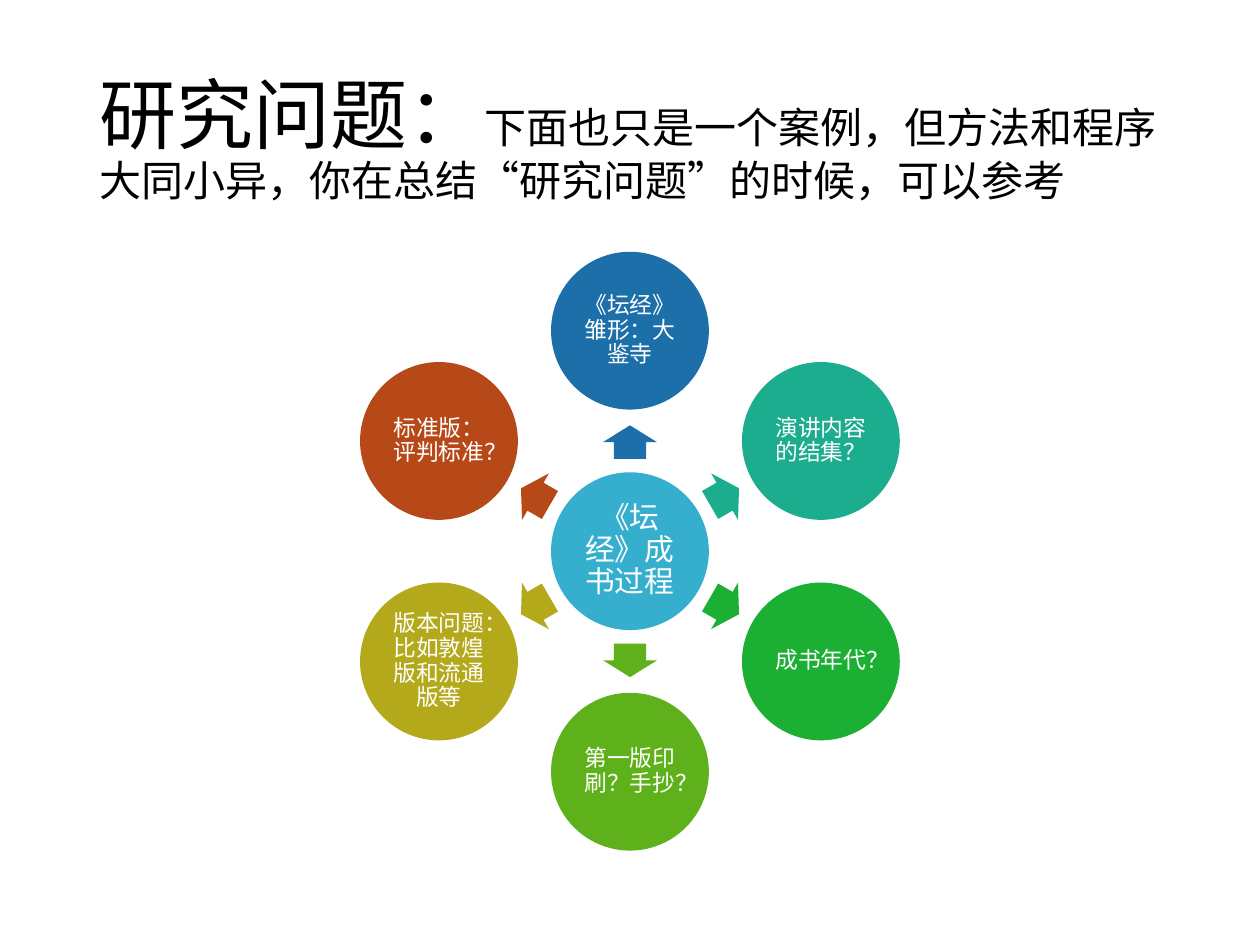
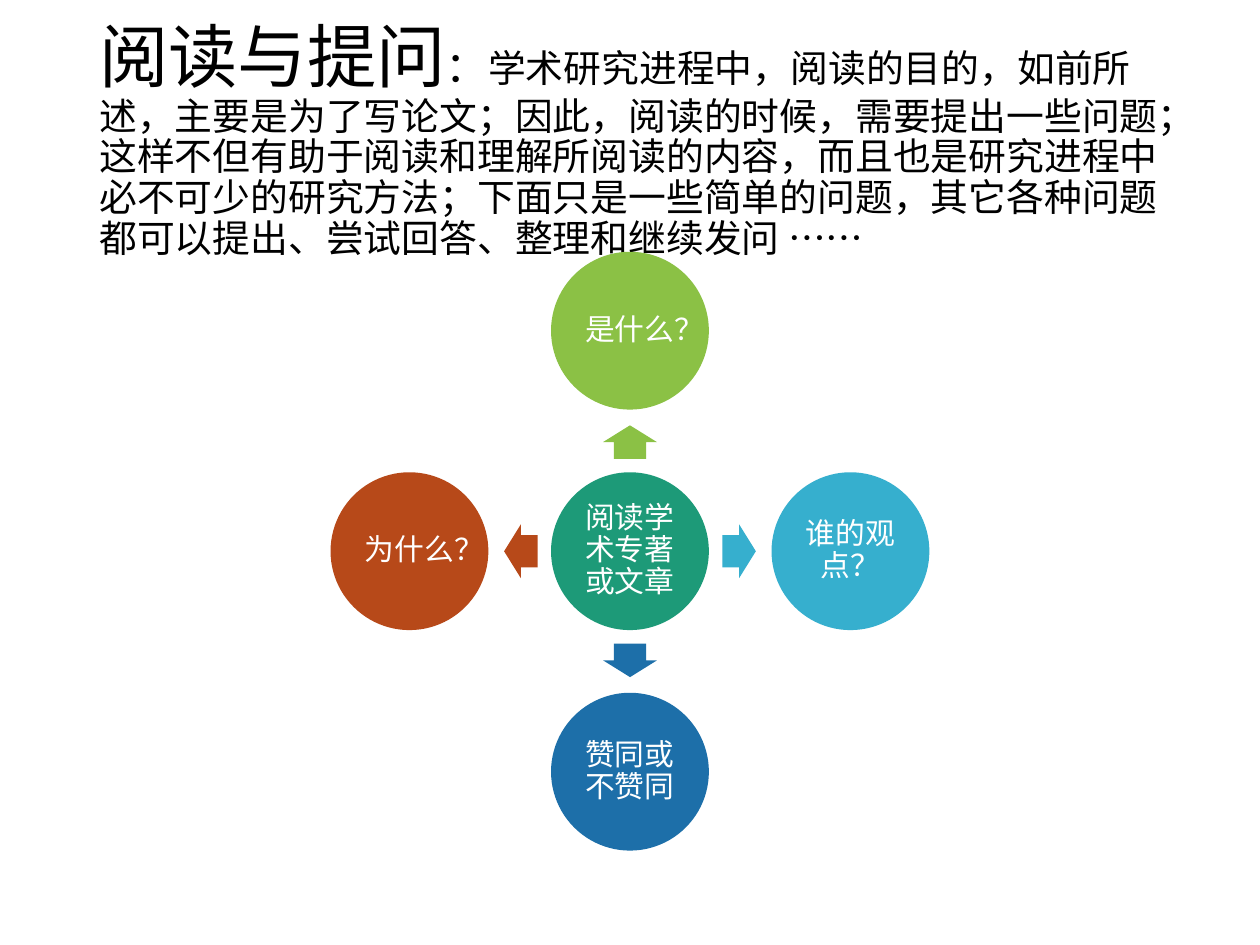
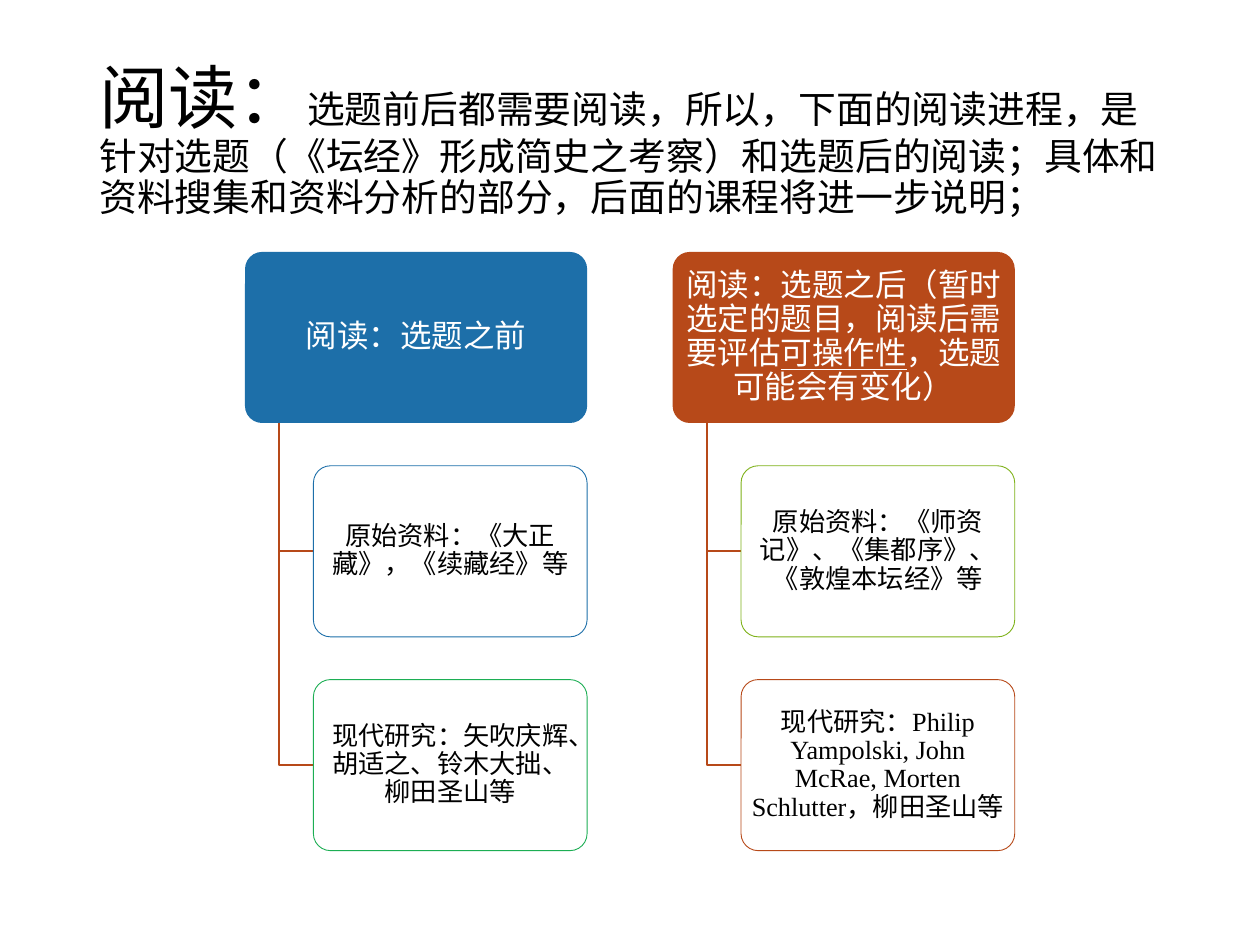
import math

import pptx
import pptx.dml.color
import pptx.enum.lang
import pptx.enum.shapes
import pptx.enum.text
import pptx.util

Pt = pptx.util.Pt
SHAPE = pptx.enum.shapes.MSO_SHAPE
ALIGN = pptx.enum.text.PP_ALIGN

# Shared style
FONT = "Times New Roman"
BLACK, WHITE = "000000", "FFFFFF"
BLUE, RUST, SKY = "1D6FA9", "B74919", "36AFCE"


def colour(hex_code):
    return pptx.dml.color.RGBColor.from_string(hex_code)


def write(frame, pieces, ink, align, side=7.2, edge=3.6):
    """Fill a frame with one paragraph of (text, size, underlined) pieces."""
    frame.word_wrap = True
    frame.auto_size = pptx.enum.text.MSO_AUTO_SIZE.NONE
    frame.vertical_anchor = pptx.enum.text.MSO_ANCHOR.MIDDLE
    frame.margin_left = frame.margin_right = Pt(side)
    frame.margin_top = frame.margin_bottom = Pt(edge)
    paragraph = frame.paragraphs[0]
    paragraph.alignment = align
    paragraph.line_spacing = 0.9
    for text, size, underlined in pieces:
        run = paragraph.add_run()
        run.text = text
        run.font.name = FONT
        run.font.size = Pt(size)
        run.font.underline = underlined
        run.font.color.rgb = colour(ink)
        run.font.language_id = pptx.enum.lang.MSO_LANGUAGE_ID.SIMPLIFIED_CHINESE


deck = pptx.Presentation()
deck.slide_width, deck.slide_height = Pt(720), Pt(540)

# Slides and titles
headings = [
    [("研究问题：", 44, False),
     ("下面也只是一个案例，但方法和程序大同小异，你在总结“研究问题”的时候，可以参考", 24, False)],
    [("阅读与提问", 39.6, False),
     ("：", 24.3, False),
     ("学术研究进程中，阅读的目的，如前所述，主要是为了写论文；因此，阅读的时候，"
      "需要提出一些问题；这样不但有助于阅读和理解所阅读的内容，而且也是研究进程中"
      "必不可少的研究方法；下面只是一些简单的问题，其它各种问题都可以提出、尝试回答、"
      "整理和继续发问 ……", 21.6, False)],
    [("阅读：", 39.6, False),
     ("选题前后都需要阅读，所以，下面的阅读进程，是针对选题（《坛经》形成简史之考察）"
      "和选题后的阅读；具体和资料搜集和资料分析的部分，后面的课程将进一步说明；", 21.6, False)],
]
for heading in headings:
    slide = deck.slides.add_slide(deck.slide_layouts[5])
    title = slide.shapes.title
    title.left, title.top = Pt(49.5), Pt(28.75)
    title.width, title.height = Pt(621), Pt(104.4)
    write(title.text_frame, heading, BLACK, ALIGN.LEFT)
question_slide, asking_slide, reading_slide = deck.slides

# Radial diagrams: a hub, and topics clockwise from the top
CENTRE_X, CENTRE_Y = 360, 315
ORBIT, ARROW_ORBIT = 126, 62.4
DIAMETER = 90.2
ARROW_LENGTH, ARROW_BREADTH = 19.1, 30.7

radials = [
    (question_slide, ("《坛经》成书过程", SKY), 13, [
        ("《坛经》雏形：大鉴寺", BLUE),
        ("演讲内容的结集？", "1CAC8E"),
        ("成书年代？", "1BAF34"),
        ("第一版印刷？手抄？", "5FB11B"),
        ("版本问题：比如敦煌版和流通版等", "B4A91A"),
        ("标准版：评判标准？", RUST)]),
    (asking_slide, ("阅读学术专著或文章", "1D9A78"), 17, [
        ("是什么？", "8BC145"),
        ("谁的观点？", SKY),
        ("赞同或不赞同", BLUE),
        ("为什么？", RUST)]),
]
for slide, hub, topic_size, topics in radials:
    circles = [(*hub, 17, 0, 0)]
    for number, (topic, fill) in enumerate(topics):
        degrees = 360 / len(topics) * number - 90
        across, down = math.cos(math.radians(degrees)), math.sin(math.radians(degrees))
        circles.append((topic, fill, topic_size, ORBIT * across, ORBIT * down))
        arrow = slide.shapes.add_shape(
            SHAPE.RIGHT_ARROW,
            Pt(CENTRE_X + ARROW_ORBIT * across - ARROW_LENGTH / 2),
            Pt(CENTRE_Y + ARROW_ORBIT * down - ARROW_BREADTH / 2),
            Pt(ARROW_LENGTH), Pt(ARROW_BREADTH))
        arrow.adjustments[0], arrow.adjustments[1] = 0.6, 0.5
        arrow.rotation = degrees % 360
        arrow.shadow.inherit = False
        arrow.fill.solid()
        arrow.fill.fore_color.rgb = colour(fill)
        arrow.line.fill.background()

    for text, fill, size, shift_x, shift_y in circles:
        circle = slide.shapes.add_shape(
            SHAPE.OVAL,
            Pt(CENTRE_X + shift_x - DIAMETER / 2), Pt(CENTRE_Y + shift_y - DIAMETER / 2),
            Pt(DIAMETER), Pt(DIAMETER))
        circle.shadow.inherit = False
        circle.fill.solid()
        circle.fill.fore_color.rgb = colour(fill)
        circle.line.fill.background()
        write(circle.text_frame, [(text, size, False)], WHITE, ALIGN.CENTER,
              size / 10, size / 10)

# Reading stages: a head card with source cards hanging below it
LEFT, TOP = 140, 144
HEAD_WIDTH, CARD_HEIGHT = 195.5, 97.75
COLUMN_STEP, ROW_STEP = HEAD_WIDTH * 1.25, CARD_HEIGHT * 1.25
INDENT = HEAD_WIDTH * 0.2

stages = [
    [([("阅读：选题之前", 18, False)], BLUE),
     ([("原始资料：《大正藏》，《续藏经》等", 15, False)], BLUE),
     ([("现代研究：矢吹庆辉、胡适之、铃木大拙、柳田圣山等", 15, False)], "1CAE53")],
    [([("阅读：选题之后（暂时选定的题目，阅读后需要评估", 18, False),
       ("可操作性", 18, True),
       ("，选题可能会有变化）", 18, False)], RUST),
     ([("原始资料：《师资记》、《集都序》、《敦煌本坛经》等", 15, False)], "7FB21A"),
     ([("现代研究：Philip Yampolski, John McRae, Morten Schlutter，柳田圣山等", 15, False)],
      RUST)],
]
for column, cards in enumerate(stages):
    head_left = LEFT + column * COLUMN_STEP
    for row, (pieces, accent) in enumerate(cards):
        is_head = row == 0
        indent = 0 if is_head else INDENT
        top = TOP + row * ROW_STEP
        if not is_head:
            stem_x, branch_y = head_left + INDENT / 2, top + CARD_HEIGHT / 2
            outline = reading_slide.shapes.build_freeform(Pt(stem_x), Pt(TOP + CARD_HEIGHT))
            outline.add_line_segments(
                [(Pt(stem_x), Pt(branch_y)), (Pt(head_left + INDENT), Pt(branch_y))],
                close=False)
            branch = outline.convert_to_shape()
            branch.shadow.inherit = False
            branch.fill.background()
            branch.line.color.rgb = colour(RUST)
            branch.line.width = Pt(1)

        card = reading_slide.shapes.add_shape(
            SHAPE.ROUNDED_RECTANGLE, Pt(head_left + indent), Pt(top),
            Pt(HEAD_WIDTH - indent), Pt(CARD_HEIGHT))
        card.adjustments[0] = 0.1
        card.shadow.inherit = False
        card.fill.solid()
        card.fill.fore_color.rgb = colour(accent if is_head else WHITE)
        if is_head:
            card.line.fill.background()
        else:
            card.line.color.rgb = colour(accent)
            card.line.width = Pt(0.5)
        size = pieces[0][1]
        write(card.text_frame, pieces, WHITE if is_head else BLACK, ALIGN.CENTER,
              size * 0.15, size * 0.1)

deck.save("out.pptx")
